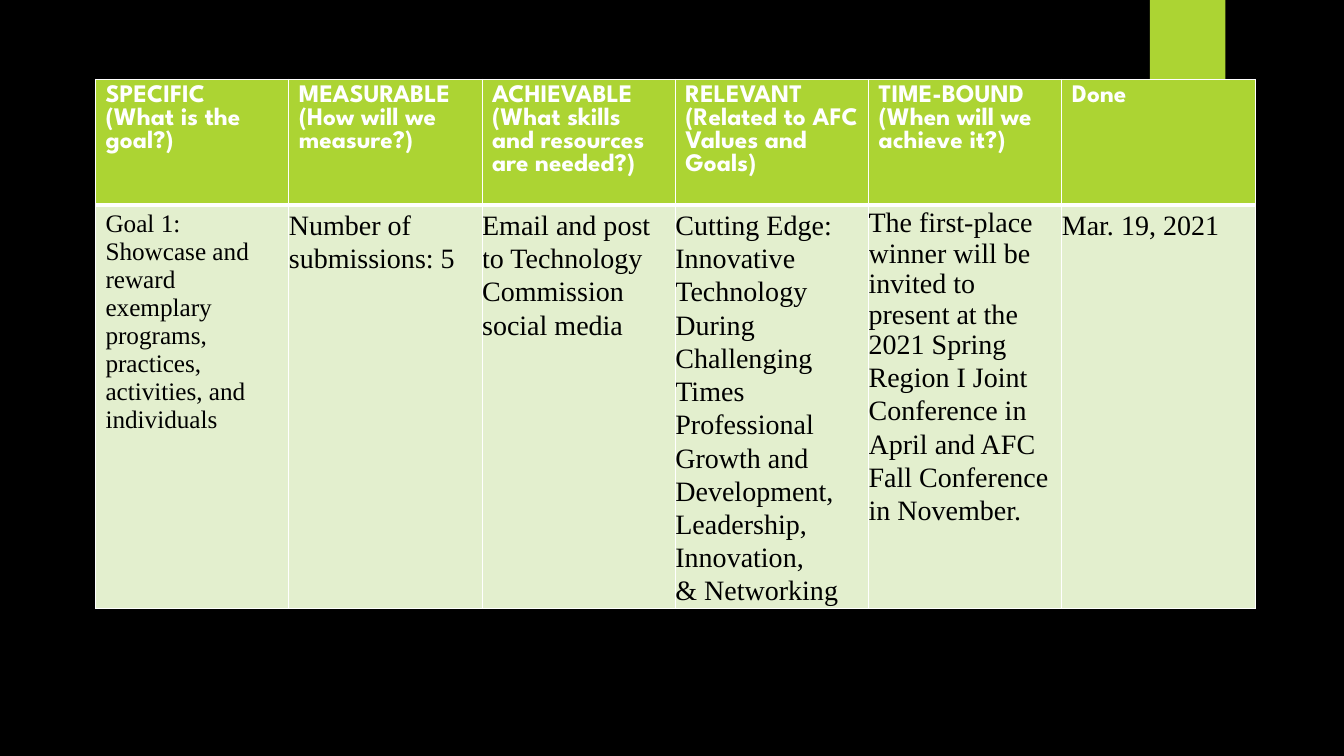
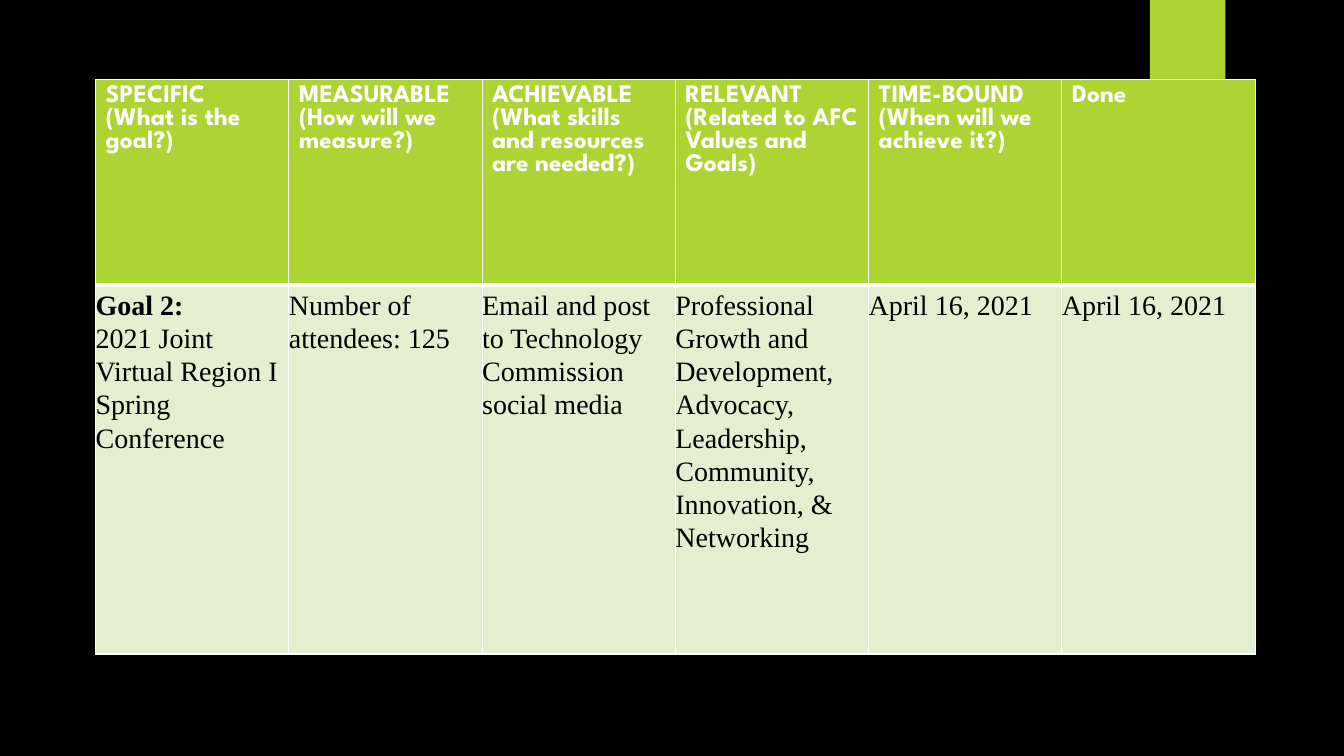
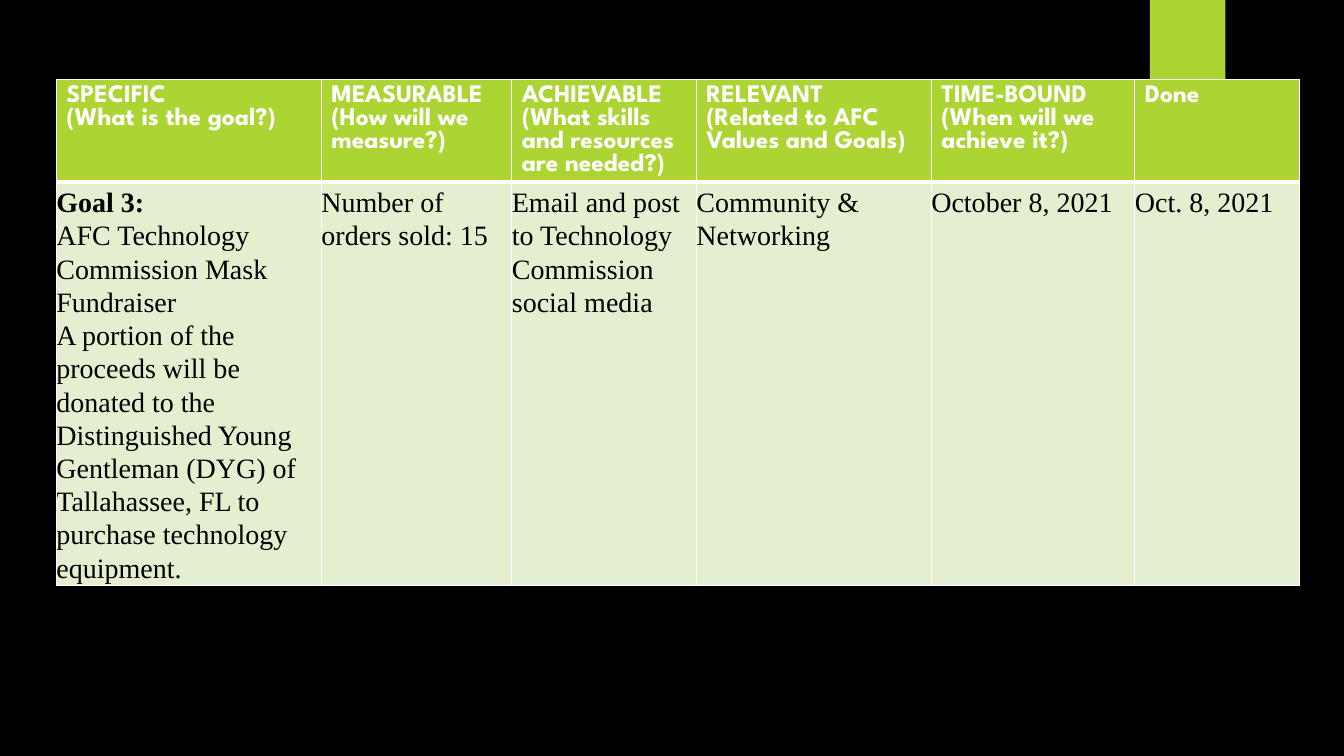
import pptx
import pptx.dml.color
import pptx.enum.shapes
import pptx.oxml.ns
import pptx.util
import lxml.etree

Cm, Pt = pptx.util.Cm, pptx.util.Pt
RGB = pptx.dml.color.RGBColor

BLACK = RGB(0x00, 0x00, 0x00)
WHITE = RGB(0xFF, 0xFF, 0xFF)
LIME = RGB(0xAC, 0xD4, 0x33)
PALE = RGB(0xE3, 0xEF, 0xCE)

HEAD_FONT = "League Spartan"
BODY_FONT = "Times New Roman"
TOP = 2.0
THIN, THICK = 1, 3

HEADS = [
    ["SPECIFIC", "(What is the goal?)"],
    ["MEASURABLE", "(How will we measure?)"],
    ["ACHIEVABLE", "(What skills and resources are needed?)"],
    ["RELEVANT", "(Related to AFC", "Values and Goals)"],
    ["TIME-BOUND", "(When will we achieve it?)"],
    ["Done"],
]
MEDIA = ["Email and post to Technology Commission social media"]

GOALS = [
    {
        "left": 2.41, "cols": [4.87] * 6, "rows": [3.17, 10.16],
        "cells": [
            ["Goal 1:", "Showcase and reward exemplary programs, practices, "
             "activities, and individuals"],
            ["Number of submissions: 5"],
            MEDIA,
            ["Cutting Edge: Innovative", "Technology During",
             "Challenging Times", "Professional Growth and", "Development,",
             "Leadership, Innovation,", "& Networking"],
            ["The first-place winner will be invited to present at the "
             "2021 Spring", "Region I Joint",
             "Conference in April and AFC Fall Conference in November."],
            ["Mar. 19, 2021"],
        ],
    },
    {
        "left": 2.41, "cols": [4.87] * 6, "rows": [5.18, 9.3],
        "cells": [
            ["Goal 2:", "2021 Joint Virtual Region I Spring Conference"],
            ["Number of attendees: 125"],
            MEDIA,
            ["Professional Growth and", "Development, Advocacy,",
             "Leadership, Community,", "Innovation, &", "Networking"],
            ["April 16, 2021"],
            ["April 16, 2021"],
        ],
    },
    {
        "left": 1.42, "cols": [6.68, 4.8, 4.65, 5.92, 5.13, 4.14],
        "rows": [2.57, 10.16],
        "cells": [
            ["Goal 3:", "AFC Technology Commission Mask", "Fundraiser",
             "A portion of the proceeds will be donated to the Distinguished "
             "Young Gentleman (DYG) of Tallahassee, FL to purchase "
             "technology equipment."],
            ["Number of orders sold: 15"],
            MEDIA,
            ["Community &", "Networking"],
            ["October 8, 2021"],
            ["Oct. 8, 2021"],
        ],
    },
]


def set_edges(cell, top, bottom):
    """Draw white cell borders; top and bottom are widths in points."""
    props = cell._tc.get_or_add_tcPr()
    qn = pptx.oxml.ns.qn
    for side, width in zip("LRTB", (THIN, THIN, top, bottom)):
        line = lxml.etree.SubElement(props, qn("a:ln" + side), w=str(Pt(width)))
        fill = lxml.etree.SubElement(line, qn("a:solidFill"))
        lxml.etree.SubElement(fill, qn("a:srgbClr"), val=str(WHITE))


def fill_cell(cell, lines, back, face, size, color, bold=False, gap=1.0):
    cell.fill.solid()
    cell.fill.fore_color.rgb = back
    cell.text_frame.text = "\n".join(lines)
    for para in cell.text_frame.paragraphs:
        para.line_spacing = gap
        for run in para.runs:
            font = run.font
            font.name, font.size, font.bold = face, Pt(size), bold
            font.color.rgb = color


def add_head(cell, lines):
    set_edges(cell, THIN, THICK)
    fill_cell(cell, lines, LIME, HEAD_FONT, 18, WHITE, bold=True)


def add_body(cell, lines):
    set_edges(cell, THICK, THIN)
    cell.margin_left = cell.margin_right = cell.margin_bottom = 0
    cell.margin_top = Cm(0.08)
    fill_cell(cell, lines, PALE, BODY_FONT, 20, BLACK, gap=1.07)


def add_bar(slide):
    bar = slide.shapes.add_shape(
        pptx.enum.shapes.MSO_SHAPE.RECTANGLE,
        Cm(28.98), 0, Cm(1.9), Cm(3.17))
    bar.shadow.inherit = False
    bar.fill.solid()
    bar.fill.fore_color.rgb = LIME
    bar.line.fill.background()


def add_goal(slide, goal):
    """Add the goal table and return its body cells."""
    cols, rows = goal["cols"], goal["rows"]
    table = slide.shapes.add_table(
        len(rows), len(cols), Cm(goal["left"]), Cm(TOP),
        Cm(sum(cols)), Cm(sum(rows))).table
    table.horz_banding = False
    for col, width in zip(table.columns, cols):
        col.width = Cm(width)
    for row, height in zip(table.rows, rows):
        row.height = Cm(height)
    for i, (head, body) in enumerate(zip(HEADS, goal["cells"])):
        add_head(table.cell(0, i), head)
        add_body(table.cell(1, i), body)
    return table.rows[1].cells


def main():
    deck = pptx.Presentation()
    deck.slide_width, deck.slide_height = Cm(33.87), Cm(19.05)
    back = deck.slide_master.background.fill
    back.solid()
    back.fore_color.rgb = BLACK

    bodies = []
    for goal in GOALS:
        slide = deck.slides.add_slide(deck.slide_layouts[6])
        add_bar(slide)
        bodies.append(list(add_goal(slide, goal)))

    first, *others = bodies
    for body in others:
        body[0].text_frame.paragraphs[0].runs[0].font.bold = True

    # The first goal is set smaller and inset like the headings.
    lead = first[0]
    lead.margin_left = lead.margin_right = Cm(0.25)
    lead.margin_top = lead.margin_bottom = Cm(0.13)
    fill_cell(lead, GOALS[0]["cells"][0], PALE, BODY_FONT, 18, BLACK)
    first[4].text_frame.paragraphs[0].line_spacing = 0.98

    deck.save("out.pptx")


if __name__ == "__main__":
    main()
